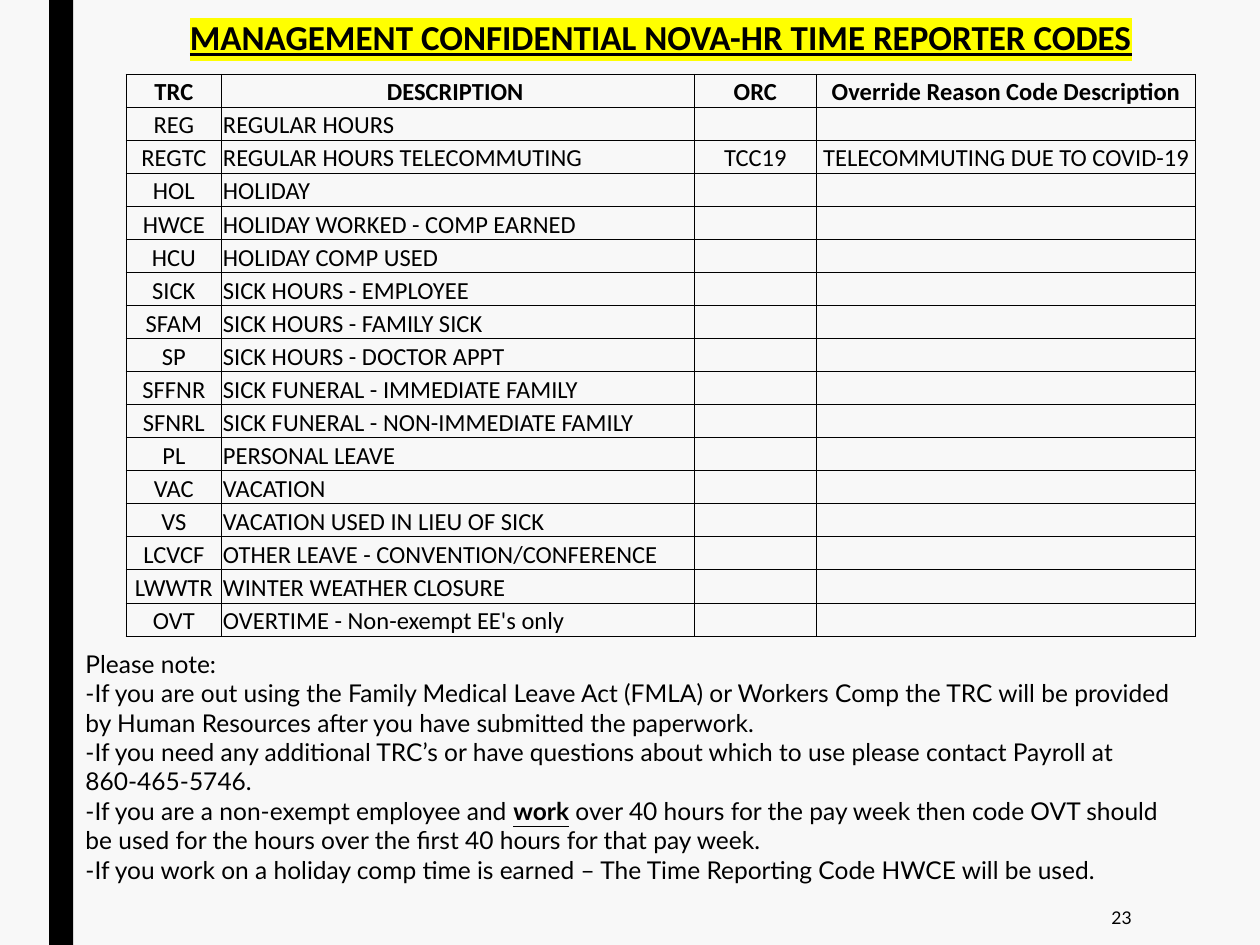
from lxml.etree import SubElement
from pptx import Presentation
from pptx.dml.color import RGBColor
from pptx.enum.shapes import MSO_SHAPE
from pptx.enum.text import MSO_ANCHOR, PP_ALIGN
from pptx.oxml.ns import qn
from pptx.util import Inches, Pt

BLACK = RGBColor(0x00, 0x00, 0x00)
PAPER = RGBColor(0xF8, 0xF8, 0xF8)
YELLOW = RGBColor(0xFF, 0xFF, 0x00)

TITLE = "MANAGEMENT CONFIDENTIAL NOVA-HR TIME REPORTER CODES"
HEADERS = ["TRC", "DESCRIPTION ", "ORC", "Override Reason Code Description"]
CODES = [
    ("REG", "REGULAR HOURS"),
    ("REGTC", "REGULAR HOURS TELECOMMUTING", "TCC19", " TELECOMMUTING DUE TO COVID-19"),
    ("HOL", "HOLIDAY"),
    ("HWCE", "HOLIDAY WORKED - COMP EARNED"),
    ("HCU", "HOLIDAY COMP USED"),
    ("SICK", "SICK HOURS - EMPLOYEE"),
    ("SFAM", "SICK HOURS - FAMILY SICK"),
    ("SP", "SICK HOURS - DOCTOR APPT"),
    ("SFFNR", "SICK FUNERAL - IMMEDIATE FAMILY"),
    ("SFNRL", "SICK FUNERAL - NON-IMMEDIATE FAMILY"),
    ("PL", "PERSONAL LEAVE"),
    ("VAC", "VACATION"),
    ("VS", "VACATION USED IN LIEU OF SICK"),
    ("LCVCF", "OTHER LEAVE - CONVENTION/CONFERENCE"),
    ("LWWTR", "WINTER WEATHER CLOSURE"),
    ("OVT", "OVERTIME - Non-exempt EE's only"),
]
COL_WIDTHS = [0.76, 3.75, 0.97, 3.01]
ALIGNS = [PP_ALIGN.CENTER, PP_ALIGN.LEFT, PP_ALIGN.CENTER, PP_ALIGN.LEFT]
GRID_HEIGHT = 4.46  # header and code rows together

# Each note is a list of (text, format) runs
NOTES = [
    [("Please note:", {})],
    [("-If you are out using the Family Medical Leave Act (FMLA) or Workers Comp the TRC "
      "will be provided by Human Resources after you have submitted the paperwork.", {})],
    [("-If you need any additional TRC’s or have questions about which to use please "
      "contact Payroll at", {})],
    [("860-465-5746.", {})],
    [("-If you are a non-exempt employee and ", {}),
     ("work", {"bold": True, "underline": True}),
     (" over 40 hours for the pay week then code OVT should be used for the hours over "
      "the first 40 hours for that pay week.", {})],
    [("-If you work on a holiday comp time is earned – The Time Reporting Code HWCE "
      "will be used.", {})],
]


def add_run(p, text, font="Calibri", size=14, bold=False, underline=False, highlight=None):
    r = p.add_run()
    r.text = text
    r.font.name = font
    r.font.size = Pt(size)
    r.font.bold = bold
    r.font.underline = underline
    r.font.color.rgb = BLACK
    if highlight is not None:
        rPr = r.font._element
        mark = SubElement(rPr, qn("a:highlight"))
        SubElement(mark, qn("a:srgbClr"), val=str(highlight))
        rPr.find(qn("a:solidFill")).addnext(mark)


class SlideBuilder:
    font = "Lato"
    border = Pt(0.5)
    inset = Inches(0.01)

    def __init__(self, slide):
        self.s = slide
        fill = slide.background.fill
        fill.solid()
        fill.fore_color.rgb = PAPER

    def bar(self, x, y, w, h):
        sp = self.s.shapes.add_shape(MSO_SHAPE.RECTANGLE, Inches(x), Inches(y), Inches(w), Inches(h))
        sp.shadow.inherit = False
        sp.fill.solid()
        sp.fill.fore_color.rgb = BLACK
        sp.line.fill.background()

    def text(self, x, y, w, h, paragraphs, size, align=PP_ALIGN.LEFT, anchor=MSO_ANCHOR.TOP):
        tf = self.s.shapes.add_textbox(Inches(x), Inches(y), Inches(w), Inches(h)).text_frame
        tf.word_wrap = True
        tf.vertical_anchor = anchor
        for i, runs in enumerate(paragraphs):
            p = tf.paragraphs[0] if i == 0 else tf.add_paragraph()
            p.alignment = align
            for text, style in runs:
                add_run(p, text, font=self.font, size=size, **style)

    def table(self, x, y, col_widths, row_heights):
        frame = self.s.shapes.add_table(len(row_heights), len(col_widths), Inches(x), Inches(y),
                                        Inches(sum(col_widths)), Inches(sum(row_heights)))
        table = frame.table
        table.first_row = table.horz_banding = False
        for col, width in zip(table.columns, col_widths):
            col.width = Inches(width)
        for row, height in zip(table.rows, row_heights):
            row.height = Inches(height)
        return table

    def cell(self, cell, text="", align=PP_ALIGN.LEFT, sides="", size=14, **style):
        cell.margin_left = cell.margin_right = cell.margin_top = self.inset
        cell.margin_bottom = 0
        cell.vertical_anchor = MSO_ANCHOR.BOTTOM
        p = cell.text_frame.paragraphs[0]
        p.alignment = align
        if text:
            add_run(p, text, size=size, **style)
        else:
            SubElement(p._p, qn("a:endParaRPr"), sz=str(size * 100))
        # Borders come before the fill in the cell properties
        tcPr = cell._tc.get_or_add_tcPr()
        for side in "LRTB":
            ln = SubElement(tcPr, qn(f"a:ln{side}"), w=str(self.border))
            if side in sides:
                fill = SubElement(ln, qn("a:solidFill"))
                SubElement(fill, qn("a:srgbClr"), val=str(BLACK))
            else:
                SubElement(ln, qn("a:noFill"))
        cell.fill.background()


def main():
    prs = Presentation()
    prs.slide_width, prs.slide_height = Inches(10), Inches(7.5)
    s = SlideBuilder(prs.slides.add_slide(prs.slide_layouts[6]))

    # Side bar, page number and notes
    s.bar(0.39, 0, 0.19, 7.5)
    s.text(7.77, 7.06, 1.31, 0.44, [[("23", {})]], 10, PP_ALIGN.RIGHT, MSO_ANCHOR.MIDDLE)
    s.text(0.58, 5.1, 8.92, 2.42, NOTES, 14)

    # Table: title row, thin spacer row, then the code grid
    grid_rows = len(CODES) + 1
    heights = [0.41, 0.11] + [GRID_HEIGHT / grid_rows] * grid_rows
    table = s.table(1, 0.07, COL_WIDTHS, heights)
    table.cell(0, 0).merge(table.cell(0, 3))
    s.cell(table.cell(0, 0), TITLE, PP_ALIGN.CENTER, size=20, bold=True,
           underline=True, highlight=YELLOW)
    for c, header in enumerate(HEADERS):
        s.cell(table.cell(1, c), sides="B", size=1)
        s.cell(table.cell(2, c), header, PP_ALIGN.CENTER, "LRTB", bold=True)
    for r, code in enumerate(CODES, start=3):
        for c, align in enumerate(ALIGNS):
            text = code[c] if c < len(code) else ""
            s.cell(table.cell(r, c), text, align, "LRTB")

    prs.save("out.pptx")


if __name__ == "__main__":
    main()
